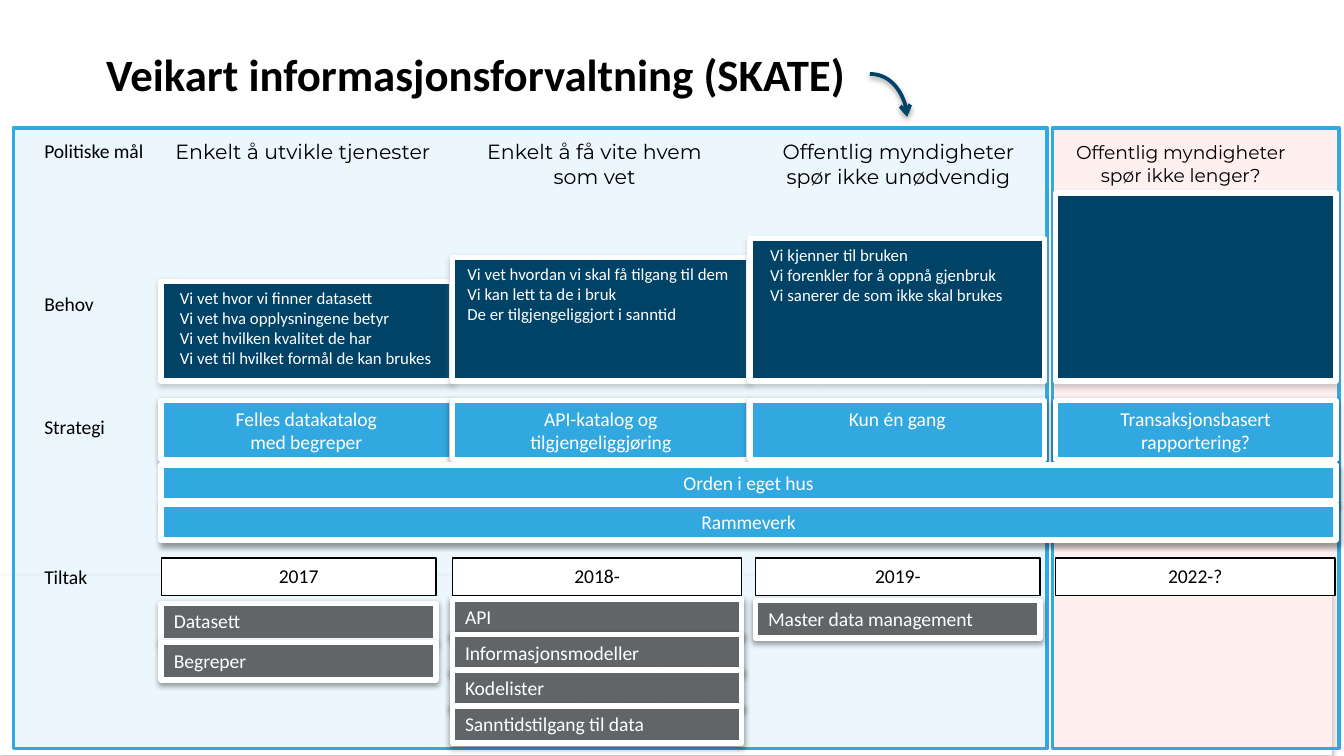
import dataclasses

import lxml.etree
import pptx
import pptx.dml.color
import pptx.enum.shapes
import pptx.enum.text
import pptx.oxml.ns
import pptx.util

Pt = pptx.util.Pt
ALIGN = pptx.enum.text.PP_ALIGN
ANCHOR = pptx.enum.text.MSO_ANCHOR


@dataclasses.dataclass(frozen=True)
class Theme:
    white: str = "FFFFFF"
    black: str = "000000"
    sky: str = "31A8DF"
    navy: str = "004367"
    gray: str = "616567"
    shade: str = "808080"
    present: str = "C3E8FA"
    future: str = "FFCCCC"
    font: str = "Calibri"
    goal_font: str = "Montserrat"
    title: float = 24
    body: float = 10.5
    need: float = 9


THEME = Theme()
INSETS = (6.75, 3.2, 6.75, 3.2)


@dataclasses.dataclass(frozen=True)
class Box:
    left: float
    top: float
    width: float
    height: float

    def inner(self, left, top, width, height):
        return Box(self.left + left, self.top + top, width, height)

    def lengths(self):
        return [Pt(value) for value in (self.left, self.top, self.width, self.height)]


@dataclasses.dataclass(frozen=True)
class Column:
    left: float
    width: float
    goal: str
    goal_box: tuple
    goal_size: float
    need_height: float
    need_inset: float
    needs: tuple
    strategy: tuple
    year: str
    card_left: float
    card_width: float
    measure_top: float
    measure_pitch: float
    measures: tuple


COLUMNS = (
    Column(86.4, 155.5, "Enkelt å utvikle tjenester", (0.7, 3, 150.5, 33), 11, 53.3, 10,
           ("Vi vet hvor vi finner datasett", "Vi vet hva opplysningene betyr",
            "Vi vet hvilken kvalitet de har", "Vi vet til hvilket formål de kan brukes"),
           ("Felles datakatalog", "med begreper"), "2017", 0, 147.2,
           254.9, 20.9, ("Datasett", "Begreper")),
    Column(242.4, 159, "Enkelt å få vite hvem som vet", (1.7, 3, 149, 33), 11, 66.2, 8,
           ("Vi vet hvordan vi skal få tilgang til dem", "Vi kan lett ta de i bruk",
            "De er tilgjengeliggjort i sanntid"),
           ("API-katalog og", "tilgjengeliggjøring"), "2018-", 0, 155,
           252.5, 19.1, ("API", "Informasjonsmodeller", "Kodelister", "Sanntidstilgang til data")),
    Column(401.8, 157.7, "Offentlig myndigheter spør ikke unødvendig", (2.9, 3, 153.4, 33), 11, 76.3, 10.8,
           ("Vi kjenner til bruken", "Vi forenkler for å oppnå gjenbruk",
            "Vi sanerer de som ikke skal brukes"),
           ("Kun én gang",), "2019-", 3, 152.4,
           253.4, 19.1, ("Master data management",)),
    Column(565.4, 150.3, "Offentlig myndigheter spør ikke lenger?", (-4.5, 4, 143.3, 32.4), 10, 100.8, 8,
           (), ("Transaksjonsbasert rapportering?",), "2022-?", 0, 149.8, 254, 19.1, ()),
)
LABELS = (("Politiske mål", 3), ("Behov", 84.9), ("Strategi", 150.5), ("Tiltak", 231.1))


def rgb(value):
    return pptx.dml.color.RGBColor.from_string(value)


def add_effects(shape, shadow=None, opacity=38):
    properties = shape._element.spPr
    effects = lxml.etree.SubElement(properties, pptx.oxml.ns.qn("a:effectLst"))
    if shadow:
        outer = lxml.etree.SubElement(
            effects, pptx.oxml.ns.qn("a:outerShdw"), blurRad=str(Pt(3.1)),
            dist=str(Pt(1.6)), dir="5400000", algn="ctr", rotWithShape="0")
        color = lxml.etree.SubElement(outer, pptx.oxml.ns.qn("a:srgbClr"), val=shadow)
        lxml.etree.SubElement(color, pptx.oxml.ns.qn("a:alpha"), val=str(opacity * 1000))


def write(shape, lines, color, size=THEME.body, font=THEME.font, align=ALIGN.LEFT,
          insets=INSETS, anchor=ANCHOR.TOP, bold=False):
    frame = shape.text_frame
    frame.word_wrap = True
    frame.vertical_anchor = anchor
    frame.margin_left, frame.margin_top, frame.margin_right, frame.margin_bottom = map(Pt, insets)
    for index, line in enumerate(lines):
        paragraph = frame.add_paragraph() if index else frame.paragraphs[0]
        paragraph.alignment = align
        run = paragraph.add_run()
        run.text = line
        run.font.name = font
        run.font.size = Pt(size)
        run.font.bold = bold
        run.font.color.rgb = rgb(color)


def add_box(slide, box, fill, line=THEME.white, weight=3, shadow=THEME.black, opacity=38):
    shape = slide.shapes.add_shape(pptx.enum.shapes.MSO_SHAPE.RECTANGLE, *box.lengths())
    shape.fill.solid()
    shape.fill.fore_color.rgb = rgb(fill)
    if line:
        shape.line.color.rgb = rgb(line)
        shape.line.width = Pt(weight)
    else:
        shape.line.fill.background()
    add_effects(shape, shadow, opacity)
    return shape


def add_panel(slide, box, fill):
    shape = add_box(slide, box, fill, THEME.sky, 2, None)
    color = shape._element.spPr.find(".//" + pptx.oxml.ns.qn("a:srgbClr"))
    lxml.etree.SubElement(color, pptx.oxml.ns.qn("a:alpha"), val="31000")


def add_title(slide, box):
    title = slide.shapes.title
    title.left, title.top, title.width, title.height = box.lengths()
    write(title, ["Veikart informasjonsforvaltning (SKATE)"], THEME.black, THEME.title,
          insets=(0, 3.6, 0, 3.6), anchor=ANCHOR.MIDDLE, bold=True)


def add_labels(slide, box):
    for text, top in LABELS:
        label = slide.shapes.add_textbox(*box.inner(0, top, 88.6, 20).lengths())
        write(label, [text], THEME.black)


def add_column(slide, box, column):
    goal = slide.shapes.add_textbox(*box.inner(*column.goal_box).lengths())
    write(goal, [column.goal], THEME.black, column.goal_size, THEME.goal_font, ALIGN.CENTER)

    need_box = box.inner(0, 135.8 - column.need_height, box.width, column.need_height)
    need = add_box(slide, need_box, THEME.navy, shadow=THEME.shade)
    write(need, column.needs, THEME.white, THEME.need, insets=(column.need_inset, 3, 0, 0))

    strategy = add_box(slide, box.inner(0, 146.2, box.width, 31.7), THEME.sky)
    write(strategy, column.strategy, THEME.white, align=ALIGN.CENTER)

    year_box = box.inner(column.card_left, 230.6, column.card_width, 20)
    year = add_box(slide, year_box, THEME.white, THEME.black, 0.75, None)
    write(year, [column.year], THEME.black, align=ALIGN.CENTER)

    for index, text in enumerate(column.measures):
        top = column.measure_top + index * column.measure_pitch
        measure_box = box.inner(column.card_left, top, column.card_width, 20)
        write(add_box(slide, measure_box, THEME.gray), [text], THEME.white)


def add_bars(slide, box):
    for index, text in enumerate(("Orden i eget hus", "Rammeverk")):
        bar = add_box(slide, box.inner(0, index * 20.9, box.width, 19.4), THEME.sky)
        write(bar, [text], THEME.white, align=ALIGN.CENTER)


def add_arrow(slide, box):
    arrow = slide.shapes.add_connector(
        pptx.enum.shapes.MSO_CONNECTOR.CURVE, Pt(box.left), Pt(box.top),
        Pt(box.left + box.width), Pt(box.top + box.height))
    arrow.line.color.rgb = rgb(THEME.navy)
    arrow.line.width = Pt(2)
    geometry = arrow._element.spPr.find(pptx.oxml.ns.qn("a:prstGeom"))
    geometry.set("prst", "curvedConnector2")
    line = arrow._element.spPr.find(pptx.oxml.ns.qn("a:ln"))
    lxml.etree.SubElement(line, pptx.oxml.ns.qn("a:tailEnd"), type="arrow")
    add_effects(arrow, THEME.black)


def add_roadmap(slide, box):
    add_panel(slide, box.inner(556.6, 0, 153.4, box.height), THEME.future)
    add_panel(slide, box.inner(0, 0, 553.7, box.height), THEME.present)
    for column in COLUMNS:
        add_column(slide, Box(column.left, box.top, column.width, box.height), column)
    add_bars(slide, box.inner(79.2, 180.7, 629.3, 40.3))
    add_labels(slide, box.inner(9.8, 0, 88.6, box.height))


def main():
    presentation = pptx.Presentation()
    presentation.slide_width = Pt(720)
    presentation.slide_height = Pt(405)
    slide = presentation.slides.add_slide(presentation.slide_layouts[5])
    add_box(slide, Box(0, 308.2, 713.5, 96.5), THEME.white, None, opacity=35)
    add_title(slide, Box(56.9, 16.6, 607, 46))
    add_roadmap(slide, Box(7.2, 68.4, 710, 332.6))
    add_arrow(slide, Box(466, 39.6, 20, 23))
    presentation.save("out.pptx")


if __name__ == "__main__":
    main()
